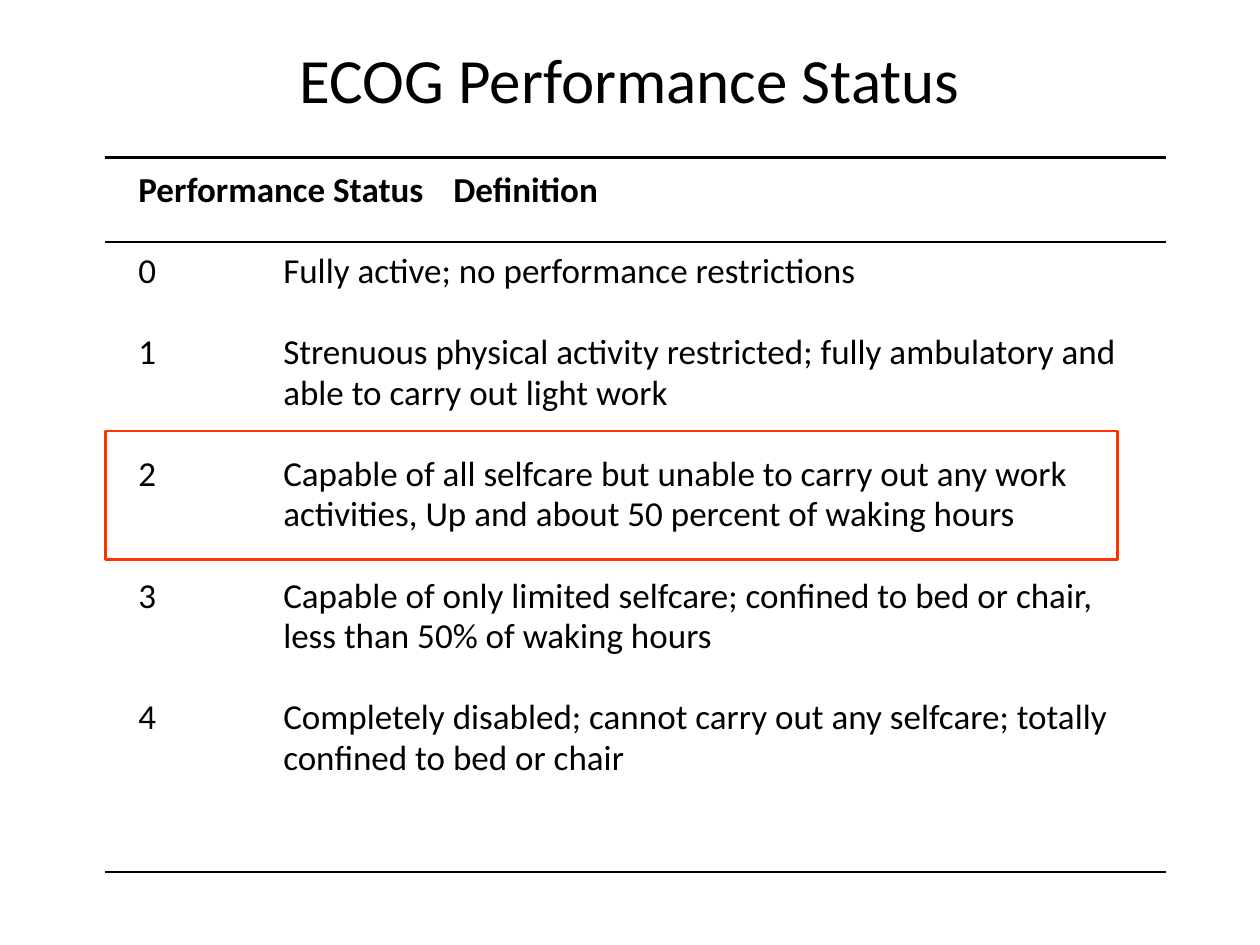
import pptx
import pptx.dml.color
import pptx.enum.shapes
import pptx.enum.text
import pptx.oxml
import pptx.oxml.ns
import pptx.util
from pptx.util import Inches

BLACK = pptx.dml.color.RGBColor(0x00, 0x00, 0x00)
RED = pptx.dml.color.RGBColor(0xFF, 0x33, 0x00)
FONT = "Calibri"
LINE_PITCH = pptx.util.Pt(23.2)
RULE_WIDTH = pptx.util.Pt(1.5)

GRADES = [
    ("0", "Fully active; no performance restrictions"),
    ("1", "Strenuous physical activity restricted; fully ambulatory and able to carry out light work"),
    ("2", "Capable of all selfcare but unable to carry out any work activities, Up and about 50 percent of waking hours"),
    ("3", "Capable of only limited selfcare; confined to bed or chair, less than 50% of waking hours"),
    ("4", "Completely disabled; cannot carry out any selfcare; totally confined to bed or chair"),
]


def add_span(para, text, size, bold=False):
    span = para.add_run()
    span.text = text
    span.font.name = FONT
    span.font.size = pptx.util.Pt(size)
    span.font.bold = bold
    span.font.color.rgb = BLACK


def place_title(page, left, top, width, height):
    title = page.shapes.title
    title.left, title.top, title.width, title.height = left, top, width, height
    title.text_frame.vertical_anchor = pptx.enum.text.MSO_ANCHOR.MIDDLE
    para = title.text_frame.paragraphs[0]
    para.alignment = pptx.enum.text.PP_ALIGN.CENTER
    add_span(para, "ECOG Performance Status", 36)


def set_columns(para, hanging, tab):
    properties = para._p.get_or_add_pPr()
    properties.set("marL", str(hanging))
    properties.set("indent", str(-hanging))
    tabs = pptx.oxml.parse_xml(
        f'<a:tabLst {pptx.oxml.ns.nsdecls("a")}><a:tab pos="{tab}" algn="l"/></a:tabLst>'
    )
    properties.append(tabs)


def place_grades(page, left, top, width, height):
    box = page.shapes.add_textbox(left, top, width, height)
    frame = box.text_frame
    frame.word_wrap = True
    frame.margin_right = Inches(0.38)

    header = frame.paragraphs[0]
    header.line_spacing = LINE_PITCH
    set_columns(header, 0, Inches(3.08))
    add_span(header, "Performance Status\tDefinition", 20, bold=True)

    for grade, definition in GRADES:
        para = frame.add_paragraph()
        para.line_spacing = LINE_PITCH
        para.space_before = LINE_PITCH
        set_columns(para, Inches(1.15), Inches(1.15))
        add_span(para, f"{grade}\t{definition}", 20)


def place_rules(page, left, width, heights):
    for y in heights:
        rule = page.shapes.add_connector(
            pptx.enum.shapes.MSO_CONNECTOR.STRAIGHT, left, y, left + width, y
        )
        rule.line.color.rgb = BLACK
        rule.line.width = RULE_WIDTH
        rule._element.spPr.append(
            pptx.oxml.parse_xml(f'<a:effectLst {pptx.oxml.ns.nsdecls("a")}/>')
        )


def place_highlight(page, left, top, width, height):
    frame = page.shapes.add_shape(
        pptx.enum.shapes.MSO_SHAPE.RECTANGLE, left, top, width, height
    )
    frame.shadow.inherit = False
    frame.fill.background()
    frame.line.color.rgb = RED
    frame.line.width = RULE_WIDTH


def main():
    deck = pptx.Presentation()
    deck.slide_width, deck.slide_height = Inches(10), Inches(7.5)
    page = deck.slides.add_slide(deck.slide_layouts.get_by_name("Title Only"))
    place_title(page, Inches(0.75), Inches(0.25), Inches(8.5), Inches(0.75))
    place_grades(page, Inches(1), Inches(1.29), Inches(8.33), Inches(5.42))
    place_rules(page, Inches(0.83), Inches(8.42), [Inches(1.25), Inches(1.92), Inches(6.92)])
    place_highlight(page, Inches(0.84), Inches(3.42), Inches(8.03), Inches(1.02))
    deck.save("out.pptx")


if __name__ == "__main__":
    main()
